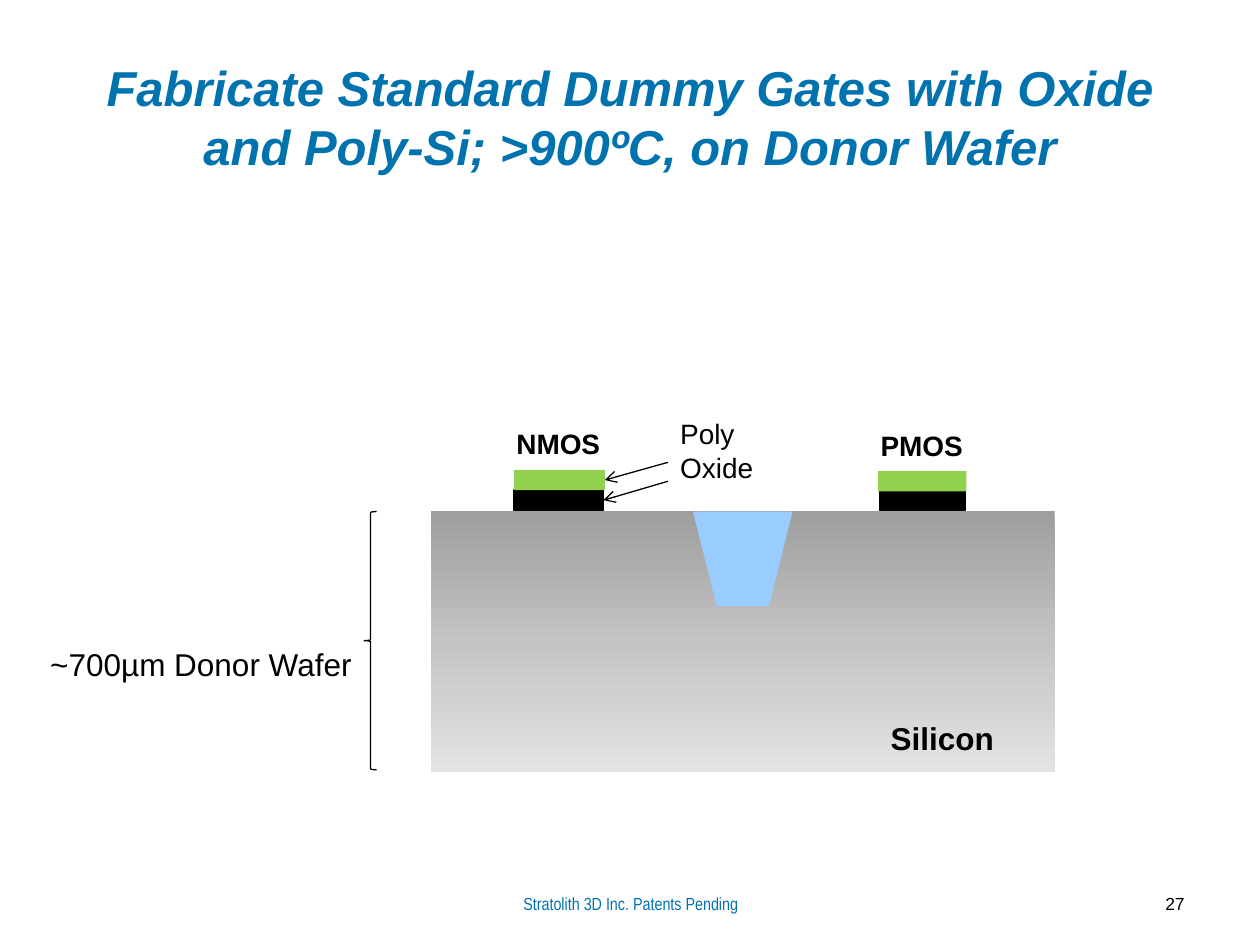
import copy
import pptx
import pptx.util
import pptx.dml.color
import pptx.enum.shapes
import pptx.enum.text
import pptx.oxml
import pptx.oxml.ns

Inches = pptx.util.Inches
Kind = pptx.enum.shapes.MSO_SHAPE
Align = pptx.enum.text.PP_ALIGN
Anchor = pptx.enum.text.MSO_ANCHOR
Fit = pptx.enum.text.MSO_AUTO_SIZE

THEME = {
    "blue": "0073AE", "black": "000000", "green": "92D050", "trench": "99CCFF",
    "wafer": [(0, "9E9E9E"), (0.5, "C4C4C4"), (1, "E3E3E3")],
    "line": 0.75,
    "title": {"size": 28, "name": "Arial", "bold": True, "italic": True},
    "body": {"size": 18, "name": "Arial"},
    "strong": {"size": 18, "name": "Arial", "bold": True},
    "label": {"size": 16, "name": "Arial"},
    "gate": {"size": 16, "name": "Arial", "bold": True},
    "foot": {"size": 10, "name": "Arial Narrow"},
    "page": {"size": 10, "name": "Arial"},
}

WAFER = (3.42, 4.06, 4.95, 2.07)
TRENCH = (5.5, 4.06, 0.79, 0.75)
BRACE = (2.89, 4.06, 0.1, 2.05)
LAYERS = [
    ("oxide", (4.08, 3.89, 0.71, 0.16), "black", True),
    ("pmos oxide", (6.98, 3.89, 0.68, 0.16), "black", True),
    ("poly", (4.08, 3.73, 0.72, 0.16), "green", False),
    ("pmos poly", (6.97, 3.74, 0.7, 0.16), "green", False),
]
ARROWS = [("poly", 5.3, 3.67), ("oxide", 5.3, 3.82)]

GROW = {"auto_size": Fit.SHAPE_TO_FIT_TEXT, "word_wrap": False}
WRAP = {"word_wrap": True}
MID = {"word_wrap": True, "vertical_anchor": Anchor.MIDDLE}
TEXTS = [
    (["Fabricate Standard Dummy Gates with Oxide and Poly-Si; >900ºC, on Donor Wafer"],
     (0.5, 0.3, 9, 1.25), "title", "blue", Align.CENTER, MID),
    (["~700µm Donor Wafer"], (0.3, 5.07, 2.69, 0.4), "body", "black", Align.LEFT, GROW),
    (["NMOS"], (4, 3.34, 0.88, 0.37), "gate", "black", Align.LEFT, GROW),
    (["PMOS"], (6.89, 3.35, 0.86, 0.37), "gate", "black", Align.LEFT, GROW),
    (["Poly", "Oxide"], (5.3, 3.26, 0.79, 0.64), "label", "black", Align.LEFT, GROW),
    (["Silicon"], (6.97, 5.66, 1.11, 0.4), "strong", "black", Align.LEFT,
     {**GROW, "word_wrap": True}),
    (["Stratolith 3D Inc. Patents Pending"], (3.42, 7.04, 3.17, 0.26),
     "foot", "blue", Align.CENTER, WRAP),
    (["27"], (8.39, 7.04, 1.11, 0.33), "page", "black", Align.RIGHT, WRAP),
]


def tint(name):
    return pptx.dml.color.RGBColor.from_string(THEME.get(name, name))


def apply(item, values):
    for key, value in values.items():
        setattr(item, key, value)


def ink(line):
    line.color.rgb = tint("black")
    line.width = pptx.util.Pt(THEME["line"])


def draw(slide, kind, box, fill=None, edge=False):
    shape = slide.shapes.add_shape(kind, *map(Inches, box))
    shape.shadow.inherit = False
    if fill:
        shape.fill.solid()
        shape.fill.fore_color.rgb = tint(fill)
    else:
        shape.fill.background()
    if edge:
        ink(shape.line)
    else:
        shape.line.fill.background()
    return shape


def shade(shape):
    fill = shape.fill
    fill.gradient()
    fill.gradient_angle = 270
    first = shape.element.spPr.find(".//" + pptx.oxml.ns.qn("a:gs"))
    first.addnext(copy.deepcopy(first))
    for stop, (place, color) in zip(fill.gradient_stops, THEME["wafer"]):
        stop.position = place
        stop.color.rgb = tint(color)


def point(slide, x, y, goal):
    end = goal.left + goal.width, goal.top + goal.height // 2
    arrow = slide.shapes.add_connector(
        pptx.enum.shapes.MSO_CONNECTOR.STRAIGHT, Inches(x), Inches(y), *end)
    arrow.end_connect(goal, 3)
    ink(arrow.line)
    space = pptx.oxml.ns.nsdecls("a")
    arrow.line._get_or_add_ln().append(
        pptx.oxml.parse_xml(f'<a:tailEnd {space} type="arrow"/>'))
    arrow.element.spPr.append(pptx.oxml.parse_xml(f"<a:effectLst {space}/>"))


def write(slide, lines, box, style, color, align, frame):
    text = slide.shapes.add_textbox(*map(Inches, box)).text_frame
    apply(text, frame)
    text.text = "\n".join(lines)
    values = {**THEME[style], "size": pptx.util.Pt(THEME[style]["size"])}
    for para in text.paragraphs:
        para.alignment = align
        for run in para.runs:
            apply(run.font, values)
            run.font.color.rgb = tint(color)


def main():
    deck = pptx.Presentation()
    apply(deck, {"slide_width": Inches(10), "slide_height": Inches(7.5)})
    slide = deck.slides.add_slide(deck.slide_layouts[6])
    shade(draw(slide, Kind.RECTANGLE, WAFER))
    gates = {name: draw(slide, Kind.RECTANGLE, box, fill, edge)
             for name, box, fill, edge in LAYERS}
    draw(slide, Kind.TRAPEZOID, TRENCH, "trench").rotation = 180
    draw(slide, Kind.LEFT_BRACE, BRACE, edge=True)
    for name, x, y in ARROWS:
        point(slide, x, y, gates[name])
    for item in TEXTS:
        write(slide, *item)
    deck.save("out.pptx")


if __name__ == "__main__":
    main()
